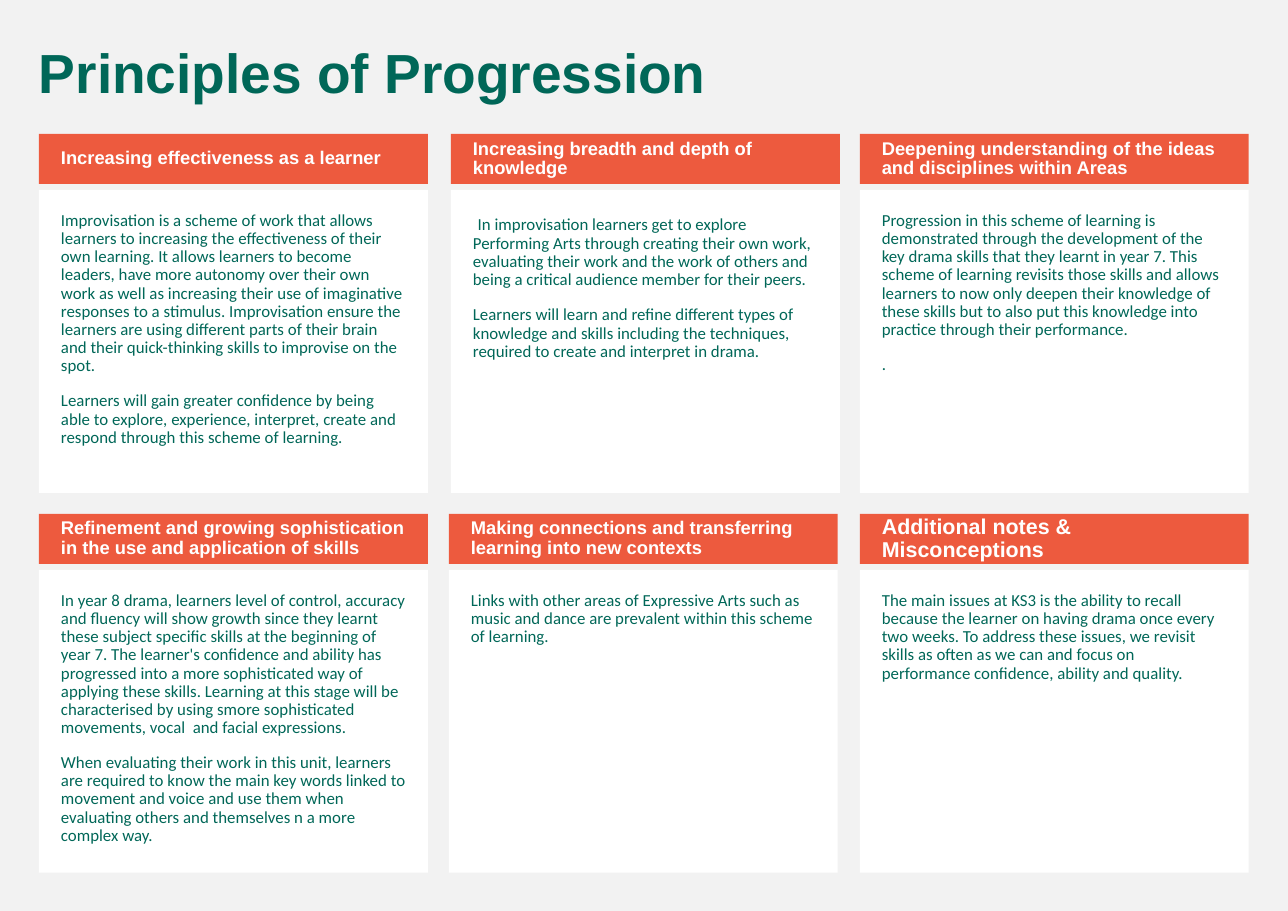
from pptx import Presentation, util as u
from pptx.dml.color import RGBColor
from pptx.enum import shapes, text

GREEN, ORANGE, WHITE, GREY = "006758", "ED5A3E", "FFFFFF", "F2F2F2"
TITLE = "Principles of Progression"
ROWS = [
    (134, [
        (39, "Increasing effectiveness as a learner", 12, [
            "Improvisation is a scheme of work that allows learners to increasing the effectiveness of their own learning. It allows learners to become leaders, have more autonomy over their own work as well as increasing their use of imaginative responses to a stimulus. Improvisation ensure the learners are using different parts of their brain and their quick-thinking skills to improvise on the spot.",
            "Learners will gain greater confidence by being able to explore, experience, interpret, create and respond through this scheme of learning."]),
        (451, "Increasing breadth and depth of knowledge", 12, [
            " In improvisation learners get to explore Performing Arts through creating their own work, evaluating their work and the work of others and being a critical audience member for their peers.",
            "Learners will learn and refine different types of knowledge and skills including the techniques, required to create and interpret in drama."]),
        (860, "Deepening understanding of the ideas and disciplines within Areas", 12, [
            "Progression in this scheme of learning is demonstrated through the development of the key drama skills that they learnt in year 7. This scheme of learning revisits those skills and allows learners to now only deepen their knowledge of these skills but to also put this knowledge into practice through their performance.",
            "."]),
    ]),
    (514, [
        (39, "Refinement and growing sophistication in the use and application of skills", 12, [
            "In year 8 drama, learners level of control, accuracy and fluency will show growth since they learnt these subject specific skills at the beginning of year 7. The learner's confidence and ability has progressed into a more sophisticated way of applying these skills. Learning at this stage will be characterised by using smore sophisticated movements, vocal  and facial expressions.",
            "When evaluating their work in this unit, learners are required to know the main key words linked to movement and voice and use them when evaluating others and themselves n a more complex way."]),
        (449, "Making connections and transferring learning into new contexts", 12, [
            "Links with other areas of Expressive Arts such as music and dance are prevalent within this scheme of learning."]),
        (860, "Additional notes & Misconceptions", 14, [
            "The main issues at KS3 is the ability to recall because the learner on having drama once every two weeks. To address these issues, we revisit skills as often as we can and focus on performance confidence, ability and quality."]),
    ]),
]
CARD_WIDTH, HEADER_HEIGHT, BODY_OFFSET, BODY_HEIGHT = 389, 50, 56, 303


def px(length):
    return u.Emu(length * 8298)


def color(value):
    return RGBColor.from_string(value)


def add_span(para, words, size, font, ink, bold):
    span = para.add_run()
    span.text = words
    span.font.size = u.Pt(size)
    span.font.name = font
    span.font.bold = bold
    span.font.color.rgb = color(ink)


def write(box, paragraphs, size, font, ink, insets, bold=False, anchor=text.MSO_ANCHOR.TOP):
    frame = box.text_frame
    frame.word_wrap = True
    frame.vertical_anchor = anchor
    frame.margin_left, frame.margin_top, frame.margin_right, frame.margin_bottom = map(px, insets)
    for index, words in enumerate(paragraphs):
        para = frame.add_paragraph() if index else frame.paragraphs[0]
        para.alignment = text.PP_ALIGN.LEFT
        para.line_spacing = 0.9
        para.space_before = u.Pt(11)
        if words.startswith((" ", "\N{NO-BREAK SPACE}")):
            add_span(para, "\N{NO-BREAK SPACE}", 14, "Cabin", ink, bold)
            words = words[1:]
        add_span(para, words, size, font, ink, bold)


def add_panel(page, left, top, height, fill):
    panel = page.shapes.add_shape(
        shapes.MSO_SHAPE.RECTANGLE, px(left), px(top), px(CARD_WIDTH), px(height))
    panel.shadow.inherit = False
    panel.fill.solid()
    panel.fill.fore_color.rgb = color(fill)
    panel.line.fill.background()
    return panel


def main():
    deck = Presentation()
    deck.slide_width, deck.slide_height = u.Inches(11.69), u.Inches(8.27)
    page = deck.slides.add_slide(deck.slide_layouts[6])
    page.background.fill.solid()
    page.background.fill.fore_color.rgb = color(GREY)

    title = page.shapes.add_textbox(px(28), px(40), px(1221), px(72))
    write(title, [TITLE], 36, "Arial", GREEN, (11, 6, 11, 6), bold=True)

    for top, cards in ROWS:
        for left, heading, heading_size, paragraphs in cards:
            body = add_panel(page, left, top + BODY_OFFSET, BODY_HEIGHT, WHITE)
            write(body, paragraphs, 11, "Calibri", GREEN, (22, 22, 22, 22))
            header = add_panel(page, left, top, HEADER_HEIGHT, ORANGE)
            write(header, [heading], heading_size, "Arial", WHITE, (22, 6, 11, 6),
                  bold=True, anchor=text.MSO_ANCHOR.MIDDLE)

    deck.save("out.pptx")


if __name__ == "__main__":
    main()
